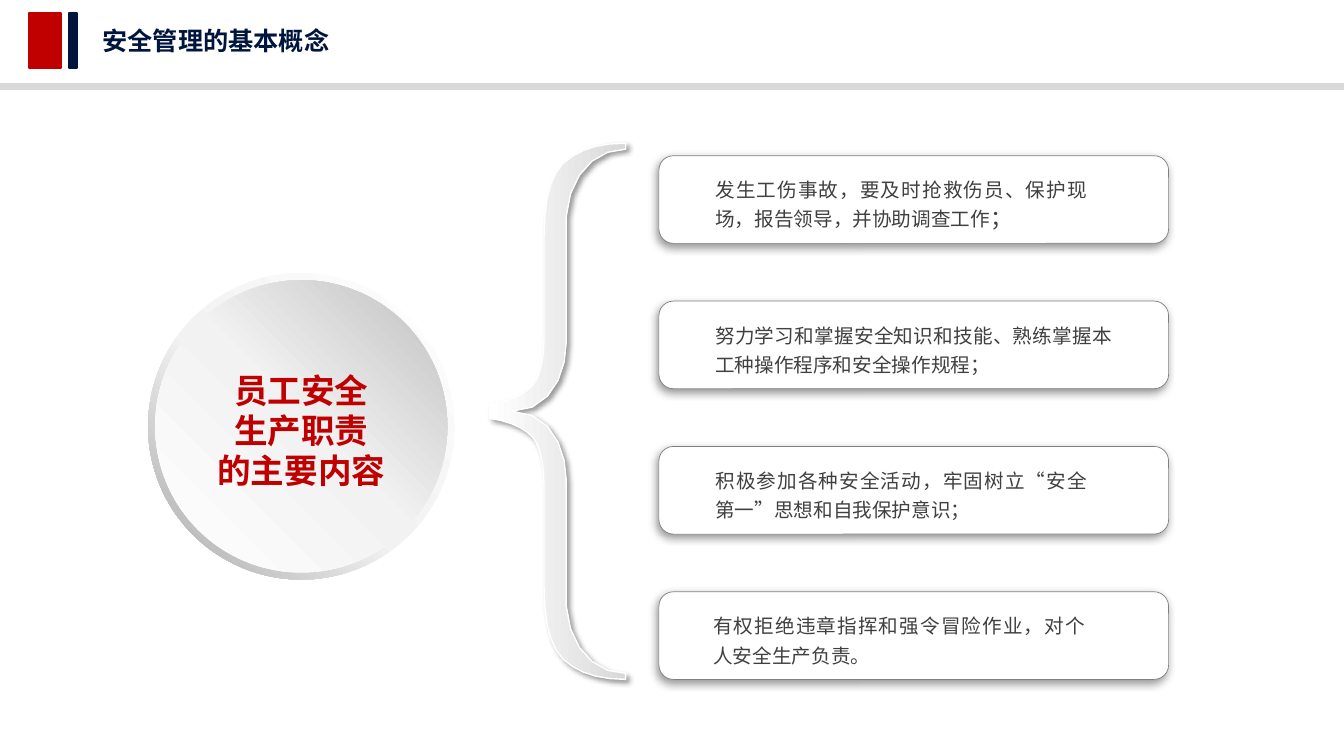
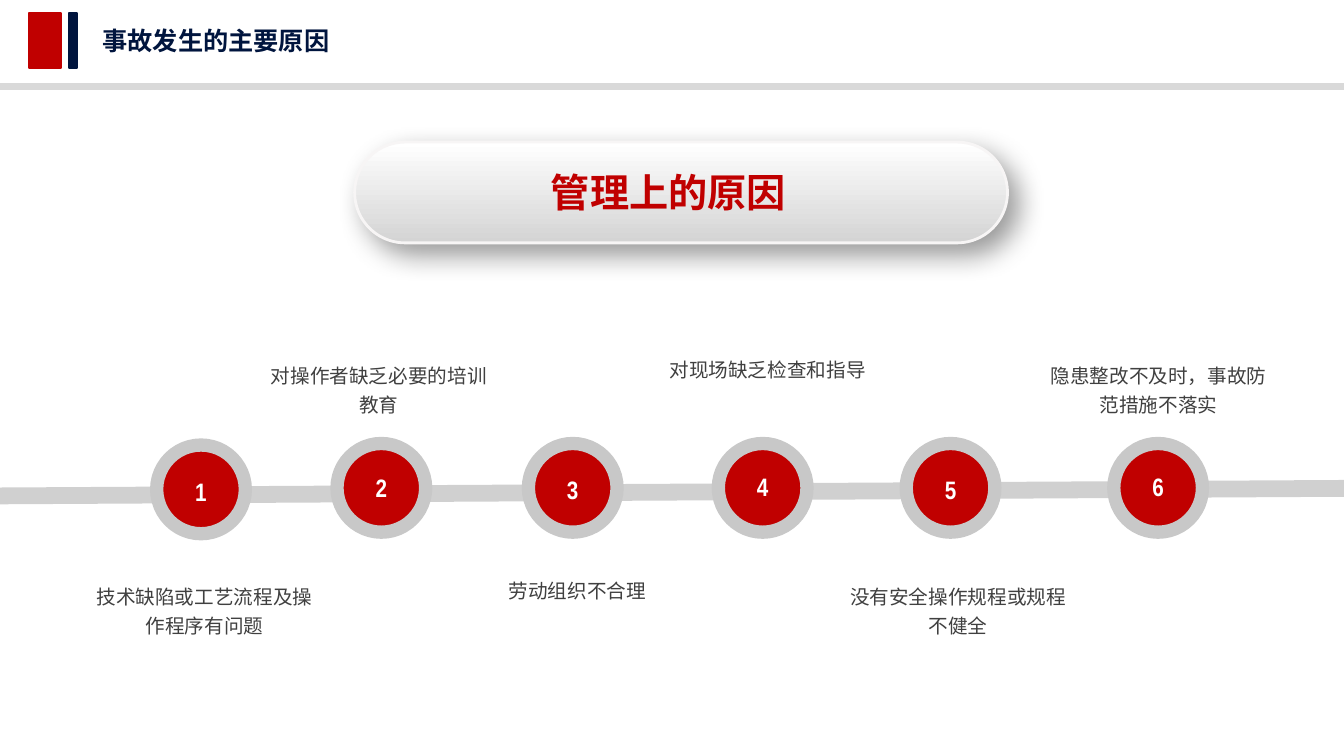
from dataclasses import dataclass
from math import comb

from lxml.etree import SubElement
from pptx import Presentation
from pptx.dml.color import RGBColor
from pptx.enum.shapes import MSO_CONNECTOR as Connector, MSO_SHAPE as Preset
from pptx.enum.text import MSO_AUTO_SIZE as AutoSize, PP_ALIGN as Align
from pptx.oxml.ns import qn
from pptx.util import Inches, Pt


@dataclass(frozen=True)
class Theme:
    red: str = "C00000"
    navy: str = "00153E"
    band: str = "D9D9D9"
    white: str = "FFFFFF"
    banner_edge: str = "F7F5F5"
    text: str = "404040"
    card_edge: str = "808080"
    ring: str = "C8C8C8"
    track: str = "D0D0D0"
    brace_fill: tuple = ((0, "FFFFFF"), (100, "D9D9D9"))
    rim_fill: tuple = ((0, "FFFFFF"), (55, "F2F2F2"), (100, "A6A6A6"))
    disc_fill: tuple = ((0, "FFFFFF"), (51, "F2F2F2"), (100, "BFBFBF"))
    banner_fill: tuple = ((0, "FFFFFF"), (100, "D4D4D4"))
    body_font: str = "Noto Sans CJK SC"
    number_font: str = "Arial Narrow"
    title_size: int = 18
    number_size: int = 18
    topic_size: int = 24
    banner_size: int = 28
    body_size: int = 14
    mark_size: int = 16
    body_leading: int = 21


THEME = Theme()
CELL = 0.1
COLUMNS, ROWS = 133.4, 75


def cells(count):
    return Inches(count * CELL)


def curve_points(controls, steps=5):
    degree = len(controls) - 1
    steps = steps if degree > 1 else 1
    for step in range(1, steps + 1):
        t = step / steps
        weights = [comb(degree, i) * t**i * (1 - t) ** (degree - i) for i in range(degree + 1)]
        yield tuple(sum(w * point[axis] for w, point in zip(weights, controls)) for axis in (0, 1))


class Deck:
    def __init__(self, theme):
        self.theme = theme
        self.presentation = Presentation()
        self.presentation.slide_width = cells(COLUMNS)
        self.presentation.slide_height = cells(ROWS)
        self.slide = None

    def add_slide(self, title):
        theme = self.theme
        self.slide = self.presentation.slides.add_slide(self.presentation.slide_layouts[6])
        for box, color in (
            ((2.9, 1.3, 3.15, 5.45), theme.red),
            ((6.85, 1.3, 0.8, 5.45), theme.navy),
            ((0, 8.35, COLUMNS, 0.5), theme.band),
        ):
            self.shape(Preset.RECTANGLE, box, color, (color, 1.5))
        self.text((9.2, 2, 24.7, 4), [title], theme.title_size, theme.navy, bold=True, wrap=False)

    def shape(self, preset, box, fill, line=None, angle=0, shadow=None, adjustment=None):
        shape = self.slide.shapes.add_shape(preset, *map(cells, box))
        if adjustment is not None:
            shape.adjustments[0] = adjustment
        self.paint(shape, fill, line, angle, shadow)

    def outline(self, points, fill, line, shadow):
        corners = [(cells(x), cells(y)) for x, y in points]
        builder = self.slide.shapes.build_freeform(*corners[0])
        builder.add_line_segments(corners[1:], close=True)
        self.paint(builder.convert_to_shape(), fill, line, 0, shadow)

    def paint(self, shape, fill, line, angle, shadow):
        if isinstance(fill, str):
            shape.fill.solid()
            shape.fill.fore_color.rgb = RGBColor.from_string(fill)
        else:
            self.gradient(shape, fill, angle)
        if line:
            color, width = line
            shape.line.color.rgb = RGBColor.from_string(color)
            shape.line.width = Pt(width)
        else:
            shape.line.fill.background()
        shape.shadow.inherit = False
        if shadow:
            self.shadow(shape, *shadow)

    def gradient(self, shape, stops, angle):
        shape.fill.gradient()
        shape.fill.gradient_angle = -angle % 360
        stop_list = shape._element.spPr.find(qn("a:gradFill")).find(qn("a:gsLst"))
        for stop in list(stop_list):
            stop_list.remove(stop)
        for position, color in stops:
            stop = SubElement(stop_list, qn("a:gs"), pos=str(position * 1000))
            SubElement(stop, qn("a:srgbClr"), val=color)

    def shadow(self, shape, blur, distance, direction):
        effects = shape._element.spPr.find(qn("a:effectLst"))
        outer = SubElement(
            effects, qn("a:outerShdw"), blurRad=str(Pt(blur)), dist=str(Pt(distance)),
            dir=str(direction * 60000), algn="ctr", rotWithShape="0",
        )
        color = SubElement(outer, qn("a:srgbClr"), val="000000")
        SubElement(color, qn("a:alpha"), val="40000")

    def line(self, start, end, color, width):
        connector = self.slide.shapes.add_connector(Connector.STRAIGHT, *map(cells, start + end))
        connector.line.color.rgb = RGBColor.from_string(color)
        connector.line.width = Pt(width)
        SubElement(connector._element.spPr, qn("a:effectLst"))

    def text(self, box, lines, size, color, bold=False, align=Align.LEFT, leading=None,
             insets=(1, 0.5), wrap=True, font=None):
        shape = self.slide.shapes.add_textbox(*map(cells, box))
        frame = shape.text_frame
        frame.text = "\n".join(lines)
        frame.word_wrap = wrap
        frame.auto_size = AutoSize.SHAPE_TO_FIT_TEXT
        frame.margin_left = frame.margin_right = cells(insets[0])
        frame.margin_top = frame.margin_bottom = cells(insets[1])
        for paragraph in frame.paragraphs:
            paragraph.alignment = align
            if leading:
                paragraph.line_spacing = Pt(leading)
            for run in paragraph.runs:
                self.format(run, size, color, bold, font)
        return frame

    def format(self, run, size, color, bold=False, font=None):
        name = font or self.theme.body_font
        run.font.name = name
        run.font.size = Pt(size)
        run.font.bold = bold
        run.font.color.rgb = RGBColor.from_string(color)
        SubElement(run._r.get_or_add_rPr(), qn("a:ea"), typeface=name)

    def card(self, top, text, text_left, text_width, mark=""):
        theme = self.theme
        self.shape(Preset.ROUNDED_RECTANGLE, (65.4, top, 50.6, 8.7), theme.white,
                   (theme.card_edge, 0.5), shadow=(6, 3, 135))
        frame = self.text((text_left, top + 1.65, text_width, 5.9), [text], theme.body_size,
                          theme.text, align=Align.JUSTIFY, leading=theme.body_leading, insets=(0, 0))
        if mark:
            run = frame.paragraphs[0].add_run()
            run.text = mark
            self.format(run, theme.mark_size, theme.text)

    def milestone(self, number, left, top, number_top):
        theme = self.theme
        diameter, number_width = 8.8, 6.6
        self.shape(Preset.OVAL, (left, top, diameter, diameter), theme.red, (theme.ring, 9.5))
        number_left = left + (diameter - number_width) / 2
        self.text((number_left, number_top, number_width, 3.6), [str(number)], theme.number_size,
                  theme.white, bold=True, align=Align.CENTER, insets=(0.6, 0.3), font=theme.number_font)

    def caption(self, left, top, text, two_lines):
        theme = self.theme
        self.text((left, top, 23.8, 6.9 if two_lines else 3.4), [text], theme.body_size, theme.text,
                  align=Align.CENTER, leading=theme.body_leading if two_lines else None)


BRACE_MIDDLE = 40.8
BRACE_UPPER_HALF = (
    ((48.6, 40.1), (50.7, 39.8), (52.1, 39.1), (52.9, 38.2)),
    ((52.9, 38.2), (53.6, 37.3), (54, 35.7), (54, 33.5)),
    ((54, 33.5), (54, 23.4)),
    ((54, 23.4), (54, 19.9), (54.6, 17.5), (55.9, 16.2)),
    ((55.9, 16.2), (57.3, 14.9), (59.3, 14.2), (62.1, 14.2)),
    ((62.1, 14.2), (62.1, 14.8)),
    ((62.1, 14.8), (59, 14.8), (56.5, 17.4), (56.2, 21.5)),
    ((56.2, 21.5), (56.2, 34)),
    ((56.2, 34), (56.2, 37.1), (54.6, 40.8), (50.8, 40.8)),
)
DUTIES = (
    ("发生工伤事故，要及时抢救伤员、保护现场，报告领导，并协助调查工作", 71, 36.9, "；"),
    ("努力学习和掌握安全知识和技能、熟练掌握本工种操作程序和安全操作规程；", 71, 39.4, ""),
    ("积极参加各种安全活动，牢固树立“安全第一”思想和自我保护意识；", 71, 36.9, ""),
    ("有权拒绝违章指挥和强令冒险作业，对个人安全生产负责。", 70.8, 36.9, ""),
)
CAUSES = (
    ("技术缺陷或工艺流程及操作程序有问题", 15.55, 44.15, 47, 8.4),
    ("对操作者缺乏必要的培训教育", 33.45, 44, 46.6, 25.7),
    ("劳动组织不合理", 52.45, 44, 46.75, 45.4),
    ("对现场缺乏检查和指导", 71.3, 44, 46.5, 64.3),
    ("没有安全操作规程或规程不健全", 89.95, 44, 46.75, 83.2),
    ("隐患整改不及时，事故防范措施不落实", 110.55, 44, 46.5, 103.1),
)
LONGEST_SINGLE_LINE = 10


def build_duties(deck):
    theme = deck.theme
    deck.add_slide("安全管理的基本概念")
    upper = [BRACE_UPPER_HALF[0][0]]
    for controls in BRACE_UPPER_HALF:
        upper.extend(curve_points(controls))
    lower = [(x, 2 * BRACE_MIDDLE - y) for x, y in reversed(upper[:-1])]
    deck.outline(upper + lower, theme.brace_fill, (theme.white, 1), (4, 3, 45))
    deck.shape(Preset.DONUT, (14.7, 27.1, 30.4, 30.4), theme.rim_fill, angle=135, adjustment=0.05)
    deck.shape(Preset.OVAL, (15.4, 27.8, 29, 29), theme.disc_fill, angle=315)
    deck.text((13.95, 36.65, 31.9, 12.1), ["员工安全", "生产职责", "的主要内容"], theme.topic_size,
              theme.red, bold=True, align=Align.CENTER, insets=(0, 0))
    for row, (text, left, width, mark) in enumerate(DUTIES):
        deck.card(15.45 + 14.42 * row, text, left, width, mark)


def build_causes(deck):
    theme = deck.theme
    deck.add_slide("事故发生的主要原因")
    deck.shape(Preset.ROUNDED_RECTANGLE, (35.2, 14.1, 64.8, 10), theme.banner_fill,
               (theme.banner_edge, 2), angle=90, shadow=(20, 10, 45), adjustment=0.5)
    deck.text((53.7, 16.2, 26, 5.7), ["管理上的原因"], theme.banner_size, theme.red, bold=True)
    deck.line((0, 49.2), (COLUMNS, 48.45), theme.track, 12)
    for number, (text, left, top, number_top, caption_left) in enumerate(CAUSES, 1):
        deck.milestone(number, left, top, number_top)
        deck.caption(caption_left, 56.9 if number % 2 else 35, text, len(text) > LONGEST_SINGLE_LINE)


def main():
    deck = Deck(THEME)
    build_duties(deck)
    build_causes(deck)
    deck.presentation.save("out.pptx")


if __name__ == "__main__":
    main()
